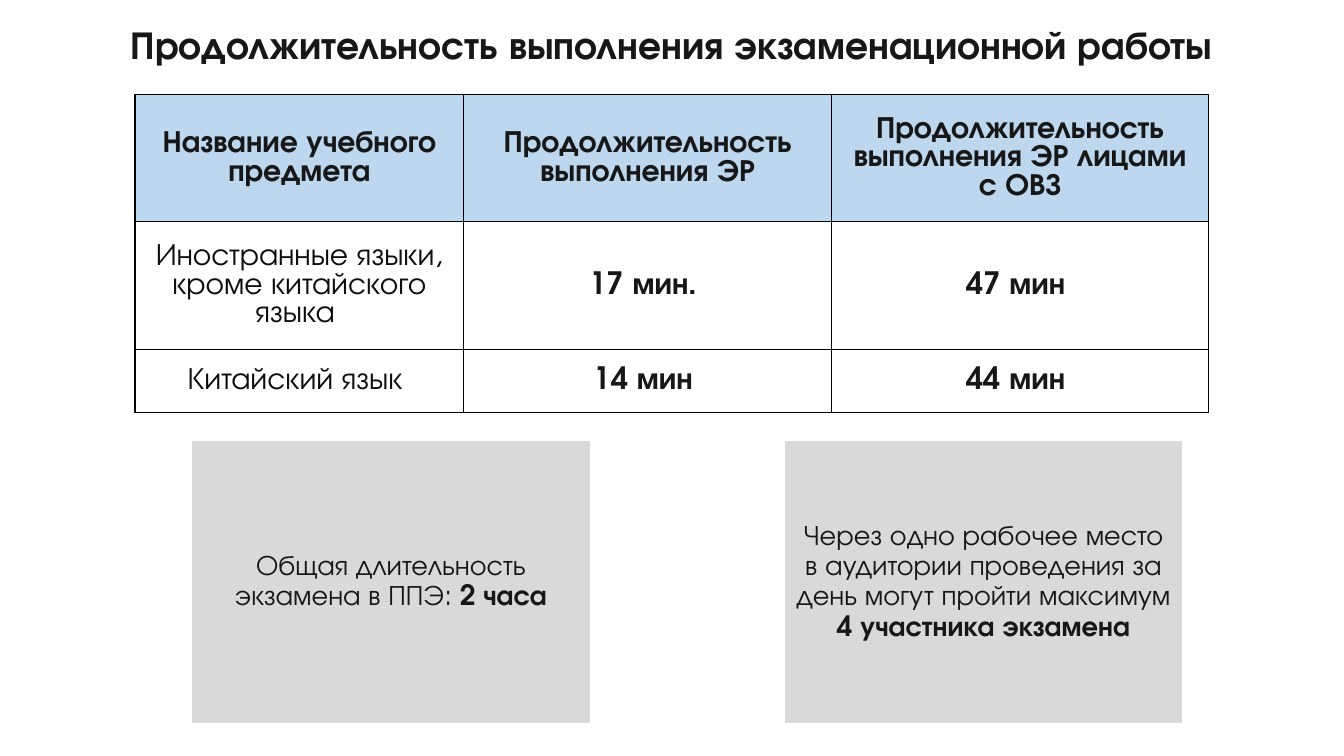
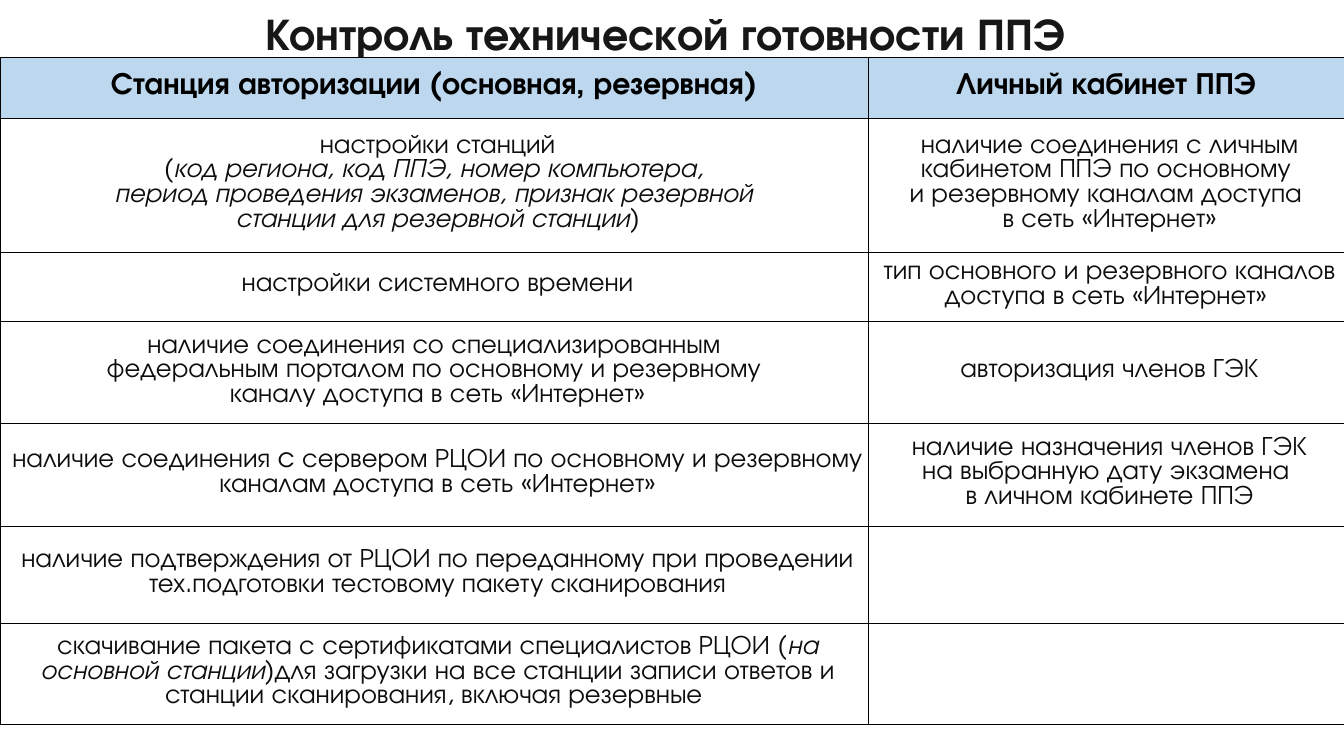
from lxml.etree import SubElement as Sub
from pptx import Presentation
from pptx.dml.color import RGBColor as Rgb
from pptx.enum.shapes import MSO_SHAPE as Kind
from pptx.enum.text import MSO_ANCHOR as Anchor, PP_ALIGN as Align
from pptx.oxml.ns import qn
from pptx.util import Inches, Pt

WIDE, HIGH = Inches(13.33), Inches(7.5)
FONT = "TeX Gyre Adventor"
INK, DARK, BLACK = "181717", "0D0D0D", "000000"
BLUE, GRAY, WHITE = "BDD7EE", "D9D9D9", "FFFFFF"
TIGHT = 0.925  # line pitch in tables, as a share of the text size

HOURS = [
    ["Название учебного предмета", "Продолжительность выполнения ЭР",
     "Продолжительность выполнения ЭР лицами с ОВЗ"],
    ["Иностранные языки, кроме китайского языка ", "17 мин. ", "47 мин "],
    ["Китайский язык ", "14 мин ", "44 мин "],
]
CHECKS = [
    ["Станция авторизации (основная, резервная)", "Личный кабинет ППЭ"],
    ["настройки станций\n"
     "(|код региона, код ППЭ, номер компьютера, |\n"
     "|период проведения экзаменов, признак резервной |\n"
     "|станции для резервной станции|)",
     "наличие соединения с личным кабинетом ППЭ по основному \n"
     "и резервному каналам доступа \n"
     "в сеть «Интернет»"],
    ["настройки системного времени",
     "тип основного и резервного каналов доступа в сеть «Интернет» "],
    ["наличие соединения со специализированным \n"
     "федеральным порталом по основному и резервному \n"
     "каналу доступа в сеть «Интернет»",
     "авторизация членов ГЭК"],
    ["наличие соединения c сервером РЦОИ по основному и резервному "
     "каналам доступа в сеть «Интернет»",
     "наличие назначения членов ГЭК\n"
     "на выбранную дату экзамена \n"
     "в личном кабинете ППЭ"],
    ["наличие подтверждения от РЦОИ по переданному при проведении "
     "тех.подготовки тестовому пакету сканирования", ""],
    ["скачивание пакета с сертификатами специалистов РЦОИ "
     "(|на основной станции|)для загрузки на все станции записи ответов "
     "и станции сканирования, включая резервные ", ""],
]
NOTES = [
    (14.33, "Общая длительность экзамена в ППЭ: |2 часа|"),
    (58.43, "Через одно рабочее место в аудитории проведения "
            "за день могут пройти максимум \n|4 участника экзамена|"),
]


def tint(code):
    return Rgb.from_string(code)


def across(share):
    return round(WIDE * share / 100)


def down(share):
    return round(HIGH * share / 100)


def place(box):
    """Turn percentages of the slide into left, top, width, height."""
    left, top, wide, high = box
    return across(left), down(top), across(wide), down(high)


def write(frame, text, size, ink, bold=False, mark="bold", pitch=None):
    """Fill a frame; a newline starts a paragraph, bars enclose marked runs."""
    frame.word_wrap = True
    for i, line in enumerate(text.split("\n")):
        para = frame.paragraphs[0] if i == 0 else frame.add_paragraph()
        para.alignment = Align.CENTER
        if pitch:
            para.line_spacing = pitch
        for j, part in enumerate(line.split("|")):
            if not part:
                continue
            run = para.add_run()
            run.text = part
            font = run.font
            font.name, font.size, font.bold = FONT, Pt(size), bold
            font.color.rgb = tint(ink)
            if j % 2:
                setattr(font, mark, True)


def title(slide, box, text, size):
    shape = slide.shapes.add_textbox(*place(box))
    write(shape.text_frame, text, size, INK, bold=True)


def edge(cell, width):
    props = cell._tc.get_or_add_tcPr()
    for i, side in enumerate(("lnL", "lnR", "lnT", "lnB")):
        line = props.makeelement(qn("a:" + side), {"w": str(Pt(width))})
        fill = Sub(line, qn("a:solidFill"))
        Sub(fill, qn("a:srgbClr"), val=BLACK)
        props.insert(i, line)


def table(slide, spot, cols, rows, data, style, width, pads=None):
    """Draw a grid; style gives size, ink and bold for a row and column."""
    box = (*spot, sum(cols), sum(rows))
    grid = slide.shapes.add_table(len(rows), len(cols), *place(box)).table
    grid.first_row = grid.horz_banding = False
    for col, share in zip(grid.columns, cols):
        col.width = across(share)
    for row, share in zip(grid.rows, rows):
        row.height = down(share)
    for r, line in enumerate(data):
        for c, text in enumerate(line):
            cell = grid.cell(r, c)
            cell.fill.solid()
            cell.fill.fore_color.rgb = tint(WHITE if r else BLUE)
            cell.vertical_anchor = Anchor.MIDDLE
            if pads:
                cell.margin_left = Inches(pads[0] if r else pads[1])
                cell.margin_right = cell.margin_top = Inches(pads[1])
            edge(cell, width)
            size, ink, bold = style(r, c)
            write(cell.text_frame, text, size, ink, bold, "italic",
                  Pt(size * TIGHT))


def note(slide, box, text):
    shape = slide.shapes.add_shape(Kind.RECTANGLE, *place(box))
    shape.shadow.inherit = False
    shape.fill.solid()
    shape.fill.fore_color.rgb = shape.line.color.rgb = tint(GRAY)
    shape.line.width = Pt(1)
    shape.text_frame.vertical_anchor = Anchor.MIDDLE
    write(shape.text_frame, text, 20, INK, pitch=0.9)


def timing(slide):
    def style(r, c):
        plain = r > 0 and c == 0
        return 22, DARK if plain else INK, not plain

    title(slide, (4.8, 2, 90.4, 7.6),
          "Продолжительность выполнения экзаменационной работы", 28)
    table(slide, (10.05, 12.53), (24.45, 27.38, 28.05),
          (16.8, 16.93, 8.27), HOURS, style, 1)
    for left, text in NOTES:
        note(slide, (left, 58.4, 29.5, 37.1), text)


def control(slide):
    def style(r, c):
        return (19, DARK, False) if r else (22, BLACK, True)

    title(slide, (4.65, 0.13, 90.7, 8.53),
          "Контроль технической готовности ППЭ ", 32)
    table(slide, (0, 7.6), (64.6, 35.4),
          (8, 17.73, 9.2, 13.47, 13.6, 12.8, 13.47),
          CHECKS, style, 0.5, (0.08, 0.01))


def main():
    deck = Presentation()
    deck.slide_width, deck.slide_height = WIDE, HIGH
    for build in (timing, control):
        build(deck.slides.add_slide(deck.slide_layouts[6]))
    deck.save("out.pptx")


if __name__ == "__main__":
    main()
